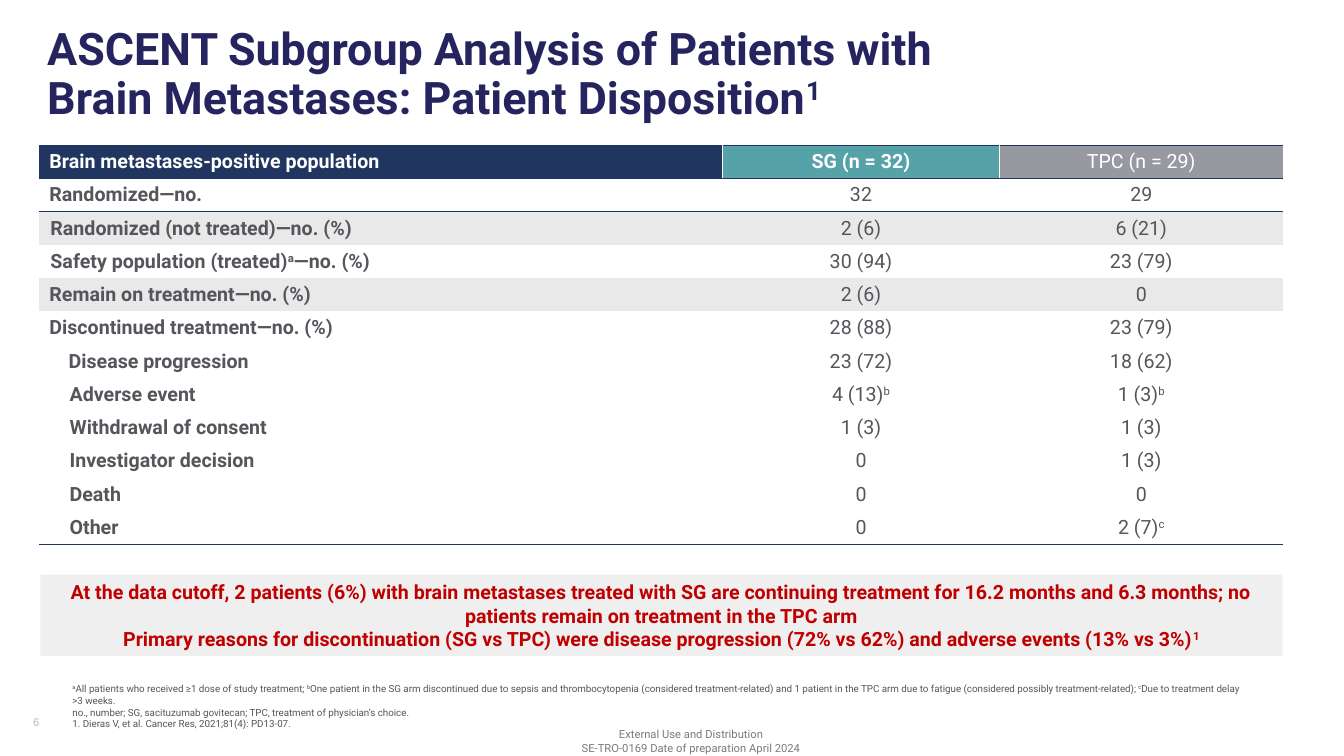
from lxml import etree
from pptx import Presentation
from pptx import util as u
from pptx.dml.color import RGBColor
from pptx.enum import shapes, text
from pptx.oxml import ns

COLORS = {
    "title": "26245E", "navy": "203661", "teal": "55A2A8", "grey": "96999F",
    "white": "FFFFFF", "band": "E9E9EA", "body": "54565B", "red": "C00000",
    "callout": "DCDDDF", "footer": "787A7E", "number": "B9BBBF",
}
CENTER = text.PP_ALIGN.CENTER
MIDDLE, BOTTOM = text.MSO_ANCHOR.MIDDLE, text.MSO_ANCHOR.BOTTOM
NO_GRID_STYLE = "{2D5ABB26-0587-4C30-8999-92F81FD0307C}"

HEADERS = ["Brain metastases-positive population", "SG (n = 32)", "TPC (n = 29)"]
HEADER_FILLS = ["navy", "teal", "grey"]
DISPOSITION = [  # label, SG, TPC, label indent in inches
    ("Randomized—no.", "32", "29", 0),
    ("Randomized (not treated)—no. (%)", "2 (6)", "6 (21)", 0.01),
    ("Safety population (treated)^a^—no. (%)", "30 (94)", "23 (79)", 0.01),
    ("Remain on treatment—no. (%)", "2 (6)", "0", 0),
    ("Discontinued treatment—no. (%)", "28 (88)", "23 (79)", 0),
    ("Disease progression", "23 (72)", "18 (62)", 0.19),
    ("Adverse event", "4 (13)^b^", "1 (3)^b^", 0.2),
    ("Withdrawal of consent", "1 (3)", "1 (3)", 0.2),
    ("Investigator decision", "0", "1 (3)", 0.2),
    ("Death", "0", "0", 0.2),
    ("Other", "0", "2 (7)^c^", 0.2),
]
BANDED_ROWS = (2, 4)

TITLE = ("ASCENT Subgroup Analysis of Patients with\n"
         "Brain Metastases: Patient Disposition^1^")
CALLOUT = [
    "At the data cutoff, 2 patients (6%) with brain metastases treated with SG are continuing "
    "treatment for 16.2 months and 6.3 months; no patients remain on treatment in the TPC arm",
    "Primary reasons for discontinuation (SG vs TPC) were disease progression (72% vs 62%) "
    "and adverse events (13% vs 3%)^1^",
]
FOOTNOTES = [
    "^a^All patients who received ≥1 dose of study treatment; ^b^One patient in the SG arm "
    "discontinued due to sepsis and thrombocytopenia (considered treatment‑related) and 1 patient "
    "in the TPC arm due to fatigue (considered possibly treatment‑related); ^c^Due to treatment "
    "delay >3 weeks.",
    "no., number; SG, sacituzumab govitecan; TPC, treatment of physician’s choice.",
    "1. Dieras V, et al. Cancer Res, 2021;81(4): PD13-07.",
]
FOOTER = ["External Use and Distribution", "SE-TRO-0169 Date of preparation April 2024"]


def rgb(name):
    return RGBColor.from_string(COLORS[name])


def write(frame, paragraphs, size=14, color="body", bold=False, align=None,
          font="Roboto", spacing=None, indent=0):
    """Fill a text frame; ^x^ marks a superscript and a newline a line break."""
    frame.word_wrap = True
    for i, content in enumerate(paragraphs):
        paragraph = frame.paragraphs[0] if i == 0 else frame.add_paragraph()
        paragraph.alignment = align
        if spacing:
            paragraph.line_spacing = spacing
        if indent:
            paragraph._p.get_or_add_pPr().set("marL", str(u.Inches(indent)))
        for part, chunk in enumerate(content.split("^")):
            for line_no, line in enumerate(chunk.split("\n")):
                if line_no:
                    paragraph.add_line_break()
                if not line:
                    continue
                run = paragraph.add_run()
                run.text = line
                run.font.name, run.font.size, run.font.bold = font, u.Pt(size), bold
                run.font.color.rgb = rgb(color)
                if part % 2:
                    run._r.get_or_add_rPr().set("baseline", "30000")


def set_borders(cell, **edges):
    """Draw cell edges given as L, R, T or B = (colour, points)."""
    properties = cell._tc.get_or_add_tcPr()
    ordered = [edge for edge in "LRTB" if edge in edges]
    for position, edge in enumerate(ordered):
        color, points = edges[edge]
        line = etree.Element(ns.qn(f"a:ln{edge}"), w=str(u.Pt(points)))
        fill = etree.SubElement(line, ns.qn("a:solidFill"))
        etree.SubElement(fill, ns.qn("a:srgbClr"), val=COLORS[color])
        properties.insert(position, line)


class DispositionSlide:
    def __init__(self, presentation):
        self.shapes = presentation.slides.add_slide(presentation.slide_layouts[6]).shapes

    def text(self, box, paragraphs, anchor=text.MSO_ANCHOR.TOP, **style):
        frame = self.shapes.add_textbox(*map(u.Inches, box)).text_frame
        frame.vertical_anchor = anchor
        write(frame, paragraphs, **style)

    def callout(self, box, paragraphs, **style):
        panel = self.shapes.add_shape(shapes.MSO_SHAPE.RECTANGLE, *map(u.Inches, box))
        panel.shadow.inherit = False
        panel.line.fill.background()
        panel.fill.solid()
        panel.fill.fore_color.rgb = rgb("callout")
        shade = panel._element.spPr.find(".//" + ns.qn("a:srgbClr"))
        etree.SubElement(shade, ns.qn("a:alpha"), val="45000")
        panel.text_frame.vertical_anchor = MIDDLE
        write(panel.text_frame, paragraphs, align=CENTER, **style)

    def cell(self, cell, content, fill, **style):
        cell.fill.solid()
        cell.fill.fore_color.rgb = rgb(fill)
        cell.vertical_anchor = MIDDLE
        cell.margin_top = cell.margin_bottom = u.Inches(0.03)
        write(cell.text_frame, [content], **style)

    def table(self, left, top, widths, row_height):
        count = len(DISPOSITION) + 1
        table = self.shapes.add_table(
            count, len(widths), u.Inches(left), u.Inches(top),
            u.Inches(sum(widths)), u.Inches(row_height * count)).table
        table.horz_banding = False
        table._tbl.tblPr.find(ns.qn("a:tableStyleId")).text = NO_GRID_STYLE
        for column, width in zip(table.columns, widths):
            column.width = u.Inches(width)
        for row in table.rows:
            row.height = u.Inches(row_height)

        rule, divider = ("navy", 1), ("white", 0.75)
        last_col = len(widths) - 1
        for col, (header, fill) in enumerate(zip(HEADERS, HEADER_FILLS)):
            head = table.cell(0, col)
            self.cell(head, header, fill, color="white", bold=col < last_col,
                      align=CENTER if col else None)
            edges = {"T": rule, "B": rule}
            if col > 0:
                edges["L"] = divider
            if col < last_col:
                edges["R"] = divider
            set_borders(head, **edges)

        for row, (*contents, indent) in enumerate(DISPOSITION, 1):
            for col, content in enumerate(contents):
                entry = table.cell(row, col)
                self.cell(entry, content, "band" if row in BANDED_ROWS else "white",
                          bold=col == 0, align=CENTER if col else None,
                          indent=0 if col else indent)
                if row == 1:
                    set_borders(entry, T=rule)
                elif row == count - 1:
                    set_borders(entry, B=rule)


def main():
    presentation = Presentation()
    presentation.slide_width, presentation.slide_height = u.Inches(13.33), u.Inches(7.5)
    slide = DispositionSlide(presentation)
    slide.text((5.14, 7.19, 3.43, 0.32), FOOTER, anchor=MIDDLE, size=8,
               color="footer", align=CENTER)
    slide.text((0.23, 7, 3, 0.32), ["6"], anchor=MIDDLE, size=8, color="number", font="Arial")
    slide.text((0.37, 0.22, 12.56, 1), [TITLE], size=32, color="title", bold=True, spacing=0.9)
    slide.text((0.62, 6.52, 11.8, 0.77), FOOTNOTES, anchor=BOTTOM, size=7)
    slide.table(0.39, 1.44, (6.78, 2.74, 2.82), 0.33)
    slide.callout((0.4, 5.7, 12.32, 0.81), CALLOUT, color="red", bold=True)
    presentation.save("out.pptx")


if __name__ == "__main__":
    main()
